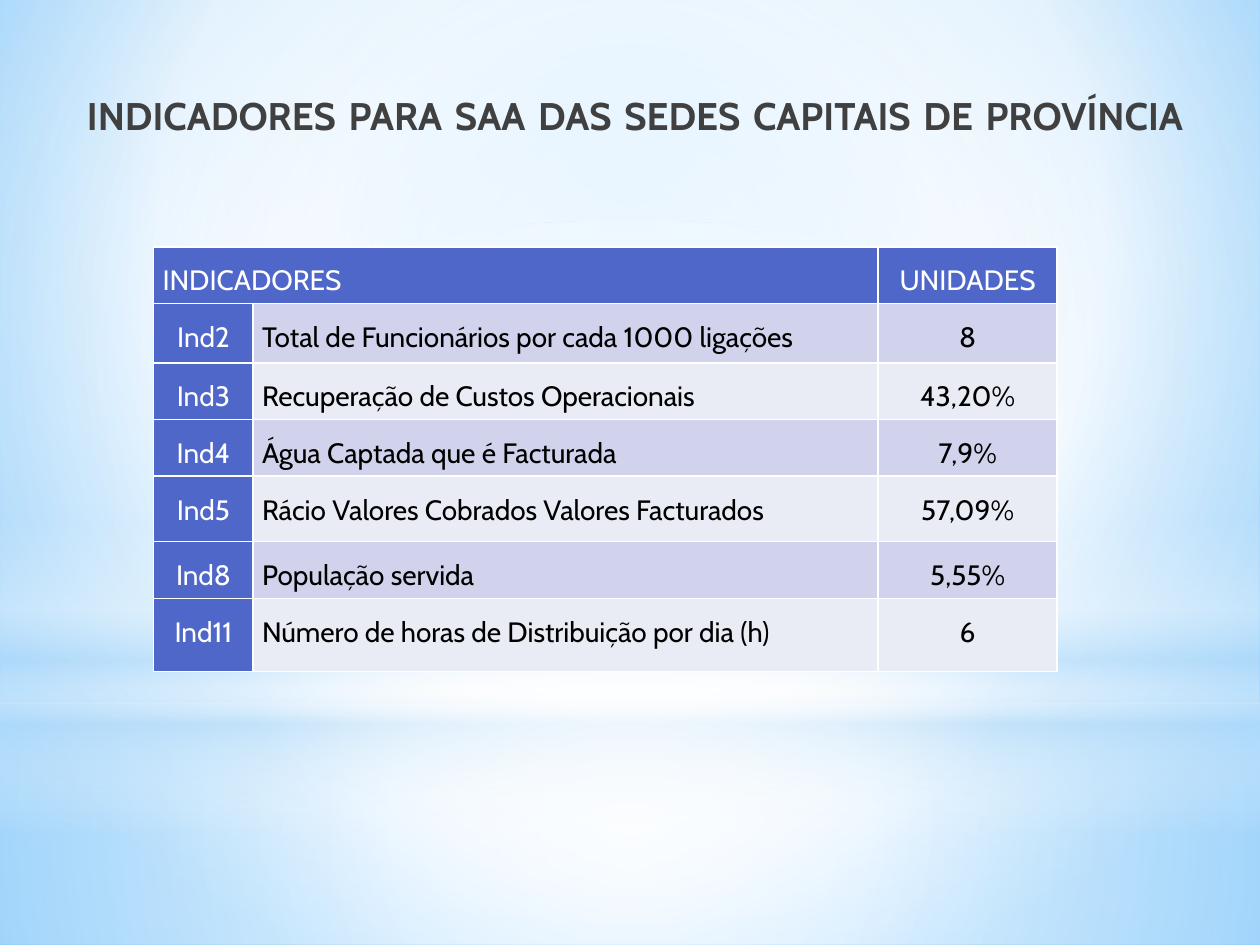
from lxml import etree
from pptx import Presentation
from pptx import util as u
from pptx.dml.color import RGBColor
from pptx.enum import shapes, text
from pptx.oxml import ns

COLORS = {
    "white": "FFFFFF",
    "title": "404040",
    "ink": "000000",
    "header": "4E67C8",
    "odd": "D0D3EB",
    "even": "E9EBF5",
    "mist": "B4DCFA",
    "sky": "9ED5FF",
    "deep": "5BB9FF",
}
FONT = "Cabin"
CENTER = (50, 50, 50, 50)
RECT, OVAL = shapes.MSO_SHAPE.RECTANGLE, shapes.MSO_SHAPE.OVAL
BACKDROP = [(0, "sky", 100), (60, "white", 100), (100, "deep", 100)]
GLOWS = [
    (RECT, 5.58, 1.92, [(0, "white", 91), (37, "white", 76), (100, "mist", 79)], CENTER),
    (RECT, 0, 5.58, [(0, "white", 89), (48, "white", 62), (100, "mist", 79)], CENTER),
    (RECT, 4.12, 2.5, [(0, "white", 0), (29, "white", 30), (45, "mist", 40),
                       (55, "white", 26), (65, "mist", 60), (100, "white", 0)], None),
    (OVAL, 1.75, 5.58, [(0, "white", 100), (56, "white", 0)], CENTER),
]
TITLE = "INDICADORES PARA SAA DAS SEDES CAPITAIS DE PROVÍNCIA"
COLUMNS = [0.79, 4.96, 1.42]
HEIGHTS = [0.45, 0.47, 0.45, 0.45, 0.52, 0.45, 0.58]
ROWS = [
    ("INDICADORES", "", "UNIDADES"),
    ("Ind2", "Total de Funcionários por cada 1000 ligações", "8"),
    ("Ind3", "Recuperação de Custos Operacionais", "43,20%"),
    ("Ind4", "Água Captada que é Facturada", "7,9%"),
    ("Ind5", "Rácio Valores Cobrados Valores Facturados", "57,09%"),
    ("Ind8", "População servida", "5,55%"),
    ("Ind11", "Número de horas de Distribuição por dia (h)", "6"),
]


def rgb(name):
    return RGBColor.from_string(COLORS[name])


def apply(target, values):
    for name, value in values.items():
        setattr(target, name, value)


def child(parent, tag, **values):
    return etree.SubElement(parent, ns.qn(tag), {k: str(v) for k, v in values.items()})


def set_gradient(solid, stops, focus):
    gradient = etree.Element(ns.qn("a:gradFill"), rotWithShape="1")
    stop_list = child(gradient, "a:gsLst")
    for position, name, opacity in stops:
        stop = child(stop_list, "a:gs", pos=position * 1000)
        color = child(stop, "a:srgbClr", val=COLORS[name])
        if opacity < 100:
            child(color, "a:alpha", val=opacity * 1000)
    if focus:
        circle = child(gradient, "a:path", path="circle")
        sides = {side: value * 1000 for side, value in zip("ltrb", focus)}
        child(circle, "a:fillToRect", **sides)
    else:
        child(gradient, "a:lin", ang=90 * 60000, scaled=0)
    solid.getparent().replace(solid, gradient)


def set_backdrop(page):
    page.background.fill.solid()
    solid = page.element.find(".//" + ns.qn("p:bgPr")).find(ns.qn("a:solidFill"))
    set_gradient(solid, BACKDROP, (20, 10, 20, 60))


def add_glow(page, kind, top, height, stops, focus):
    glow = page.shapes.add_shape(kind, 0, u.Inches(top), u.Inches(10), u.Inches(height))
    glow.shadow.inherit = False
    glow.line.fill.background()
    glow.fill.solid()
    set_gradient(glow.element.spPr.find(ns.qn("a:solidFill")), stops, focus)


def style_text(para, span, size, color, align, bold=False):
    para.alignment = align
    apply(span.font, {"name": FONT, "size": u.Pt(size), "bold": bold})
    span.font.color.rgb = rgb(color)


def set_title(page):
    title = page.shapes.title
    apply(title, {"left": u.Inches(0.59), "top": u.Inches(0.68),
                  "width": u.Inches(8.9), "height": u.Inches(0.63)})
    apply(title.text_frame, {"word_wrap": True, "auto_size": text.MSO_AUTO_SIZE.NONE,
                             "vertical_anchor": text.MSO_ANCHOR.TOP})
    para = title.text_frame.paragraphs[0]
    span = para.add_run()
    span.text = TITLE
    para.add_line_break()
    style_text(para, span, 22, "title", text.PP_ALIGN.JUSTIFY, True)
    title.element.getparent().append(title.element)


def add_borders(cell):
    properties = cell._tc.get_or_add_tcPr()
    for index, side in enumerate("LRTB"):
        line = etree.Element(ns.qn("a:ln" + side), w=str(u.Pt(1)))
        child(child(line, "a:solidFill"), "a:srgbClr", val=COLORS["white"])
        properties.insert(index, line)


def format_cell(cell, words, fill, color, align):
    apply(cell, {"margin_left": u.Inches(0.07), "margin_right": u.Inches(0.07),
                 "margin_top": 0, "margin_bottom": 0,
                 "vertical_anchor": text.MSO_ANCHOR.TOP})
    cell.fill.solid()
    cell.fill.fore_color.rgb = rgb(fill)
    add_borders(cell)
    if words:
        para = cell.text_frame.paragraphs[0]
        para.line_spacing = 1.5
        span = para.add_run()
        span.text = words
        style_text(para, span, 16, color, align)


def add_indicators(page):
    frame = page.shapes.add_table(len(ROWS), len(COLUMNS), u.Inches(1.22), u.Inches(1.96),
                                  u.Inches(sum(COLUMNS)), u.Inches(sum(HEIGHTS)))
    table = frame.table
    apply(table, {"first_row": False, "horz_banding": False})
    for column, width in zip(table.columns, COLUMNS):
        column.width = u.Inches(width)
    for row, height in zip(table.rows, HEIGHTS):
        row.height = u.Inches(height)
    table.cell(0, 0).merge(table.cell(0, 1))
    for r, row in enumerate(ROWS):
        for c, words in enumerate(row):
            heading = r == 0 or c == 0
            fill = "header" if heading else ("odd" if r % 2 else "even")
            left = c == 1 or (r, c) == (0, 0)
            align = text.PP_ALIGN.LEFT if left else text.PP_ALIGN.CENTER
            format_cell(table.cell(r, c), words, fill, "white" if heading else "ink", align)


def main():
    deck = Presentation()
    apply(deck, {"slide_width": u.Inches(10), "slide_height": u.Inches(7.5)})
    page = deck.slides.add_slide(deck.slide_layouts[5])
    set_backdrop(page)
    for glow in GLOWS:
        add_glow(page, *glow)
    set_title(page)
    add_indicators(page)
    deck.save("out.pptx")


if __name__ == "__main__":
    main()
